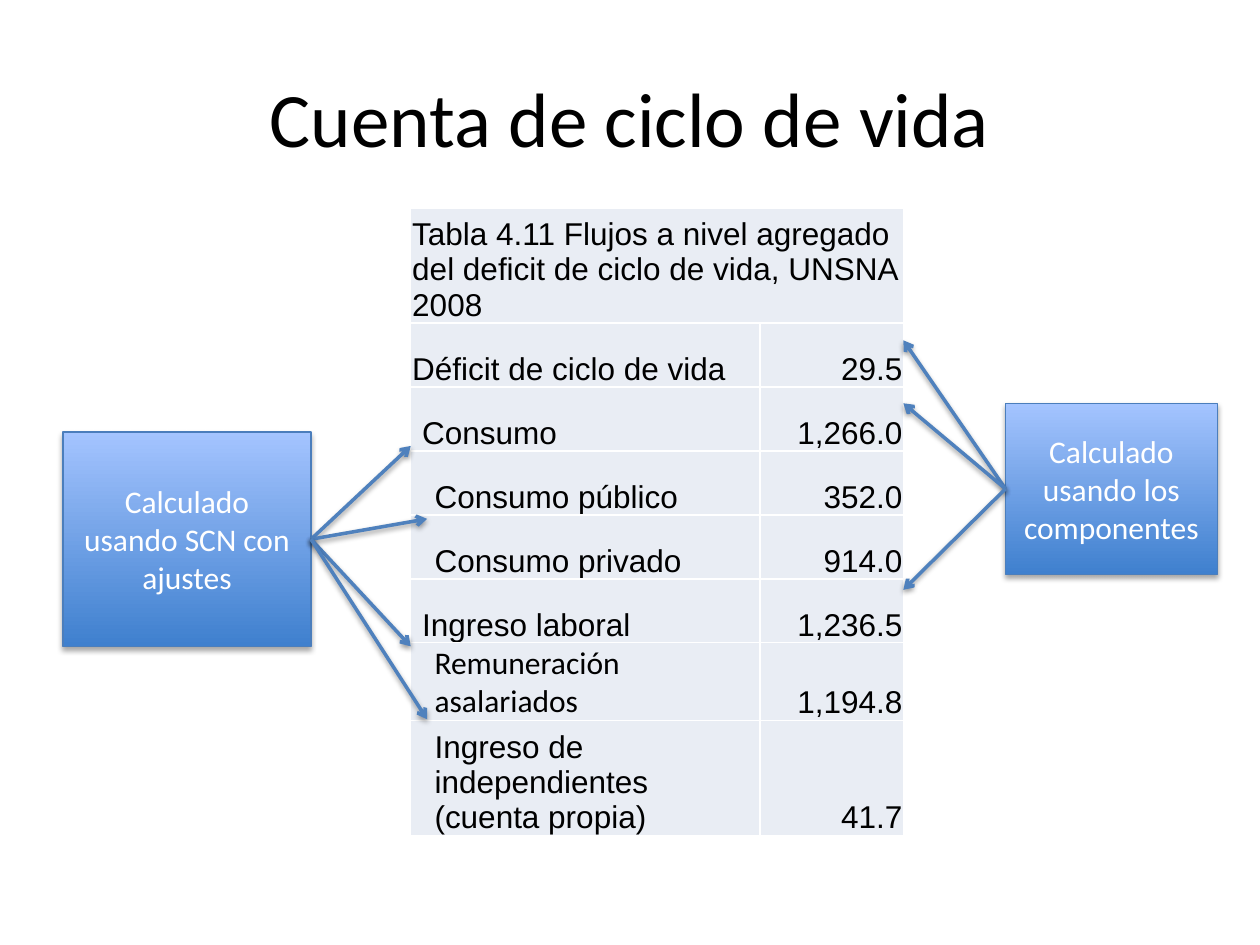
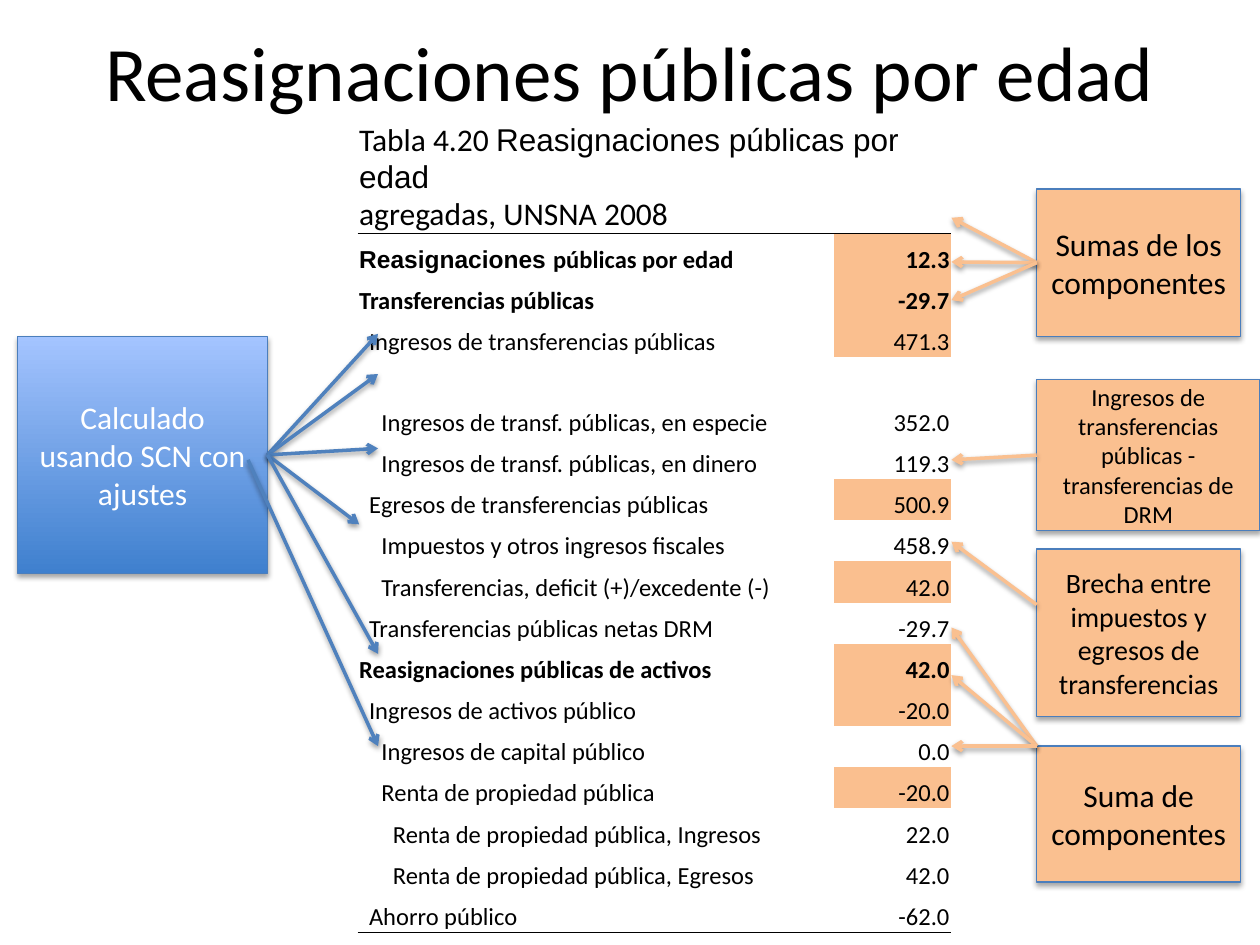
from dataclasses import dataclass

from lxml import etree
from pptx import Presentation
from pptx.dml.color import RGBColor
from pptx.enum.shapes import MSO_CONNECTOR, MSO_SHAPE
from pptx.enum.text import MSO_ANCHOR, PP_ALIGN
from pptx.oxml import parse_xml
from pptx.oxml.ns import nsdecls, qn
from pptx.util import Cm, Pt

RECT = MSO_SHAPE.RECTANGLE
STRAIGHT = MSO_CONNECTOR.STRAIGHT
MIDDLE, BOTTOM = MSO_ANCHOR.MIDDLE, MSO_ANCHOR.BOTTOM
LEFT, CENTER, RIGHT = PP_ALIGN.LEFT, PP_ALIGN.CENTER, PP_ALIGN.RIGHT
SIDE_LEFT, SIDE_RIGHT = 1, 3


@dataclass(frozen=True)
class Theme:
    calibri: str = "Calibri"
    arial: str = "Arial"
    black: str = "000000"
    white: str = "FFFFFF"
    blue: str = "4F81BD"
    outline: str = "4B7EBC"
    gradient: tuple = ("3F80CE", "A4C4FF")
    orange: str = "FAC090"
    marked: str = "FABF8F"
    pale: str = "E9EDF4"
    title: int = 44
    large: int = 18
    medium: int = 16
    small: int = 14
    indents: tuple = (0.03, 0.23, 0.48, 0.71)


T = Theme()


def rgb(value):
    return RGBColor.from_string(value)


class Deck:
    """Holds the theme and the current slide, and draws each kind of element."""

    def __init__(self):
        self.prs = Presentation()
        self.prs.slide_width, self.prs.slide_height = Cm(25.4), Cm(19.05)

    def slide(self, title, title_height):
        self.s = self.prs.slides.add_slide(self.prs.slide_layouts[6])
        tf = self.s.shapes.add_textbox(Cm(1.27), Cm(0.76), Cm(22.86), Cm(title_height)).text_frame
        tf.word_wrap = True
        tf.vertical_anchor = MIDDLE
        self.add_text(tf, [[(title, T.calibri)]], T.title, CENTER)

    def add_text(self, tf, paragraphs, size, align, color=T.black, bold=False):
        for i, runs in enumerate(paragraphs):
            p = tf.add_paragraph() if i else tf.paragraphs[0]
            p.alignment = align
            for text, font in runs:
                r = p.add_run()
                r.text = text
                r.font.name, r.font.size, r.font.bold = font, Pt(size), bold
                r.font.color.rgb = rgb(color)

    def shadow(self, shape, distance, opacity):
        spPr = shape._element.spPr
        for old in spPr.findall(qn("a:effectLst")):
            spPr.remove(old)
        spPr.append(parse_xml(
            f'<a:effectLst {nsdecls("a")}><a:outerShdw blurRad="{Pt(3.1)}" dist="{Pt(distance)}" '
            f'dir="5400000" rotWithShape="0"><a:srgbClr val="{T.black}">'
            f'<a:alpha val="{opacity * 1000}"/></a:srgbClr></a:outerShdw></a:effectLst>'))

    def box(self, x, y, w, h, text, size=T.large, fill=None):
        sp = self.s.shapes.add_shape(RECT, Cm(x), Cm(y), Cm(w), Cm(h))
        sp.shadow.inherit = False
        if fill:
            sp.fill.solid()
            sp.fill.fore_color.rgb = rgb(fill)
        else:
            sp.fill.gradient()
            sp.fill.gradient_angle = 90
            for stop, color in zip(sp.fill.gradient_stops, T.gradient):
                stop.color.rgb = rgb(color)
        sp.line.color.rgb = rgb(T.outline)
        sp.line.width = Pt(0.75)
        self.shadow(sp, 1.8, 35)
        sp.text_frame.word_wrap = True
        sp.text_frame.vertical_anchor = MIDDLE
        self.add_text(sp.text_frame, [[(text, T.calibri)]], size, CENTER, T.black if fill else T.white)
        return sp

    def arrow(self, start, end, color):
        cn = self.s.shapes.add_connector(STRAIGHT, *map(Cm, start + end))
        cn.line.color.rgb = rgb(color)
        cn.line.width = Pt(2)
        etree.SubElement(cn.line._get_or_add_ln(), qn("a:tailEnd"), type="arrow")
        self.shadow(cn, 1.6, 38)
        return cn

    def fan(self, box, side, ends, color):
        for end in ends:
            self.arrow((0, 0), end, color).begin_connect(box, side)

    def cell(self, cell, paragraphs, size, align, fill, indent=0, bold=False):
        cell.margin_left = Cm(T.indents[indent])
        cell.margin_top = cell.margin_right = Cm(0.03)
        cell.margin_bottom = 0
        cell.vertical_anchor = BOTTOM
        if fill:
            cell.fill.solid()
            cell.fill.fore_color.rgb = rgb(fill)
        else:
            cell.fill.background()
        self.add_text(cell.text_frame, paragraphs, size, align, bold=bold)

    def borders(self, cell, edges):
        tcPr = cell._tc.get_or_add_tcPr()
        for i, side in enumerate("LRTB"):
            color, width = edges.get(side, (None, 0))
            paint = f'<a:solidFill><a:srgbClr val="{color}"/></a:solidFill>' if color else "<a:noFill/>"
            tcPr.insert(i, parse_xml(f'<a:ln{side} {nsdecls("a")} w="{Pt(width)}">{paint}</a:ln{side}>'))

    def table(self, x, y, widths, heights, header, rows, size, fill, edges_of):
        frame = self.s.shapes.add_table(len(heights), 2, Cm(x), Cm(y), Cm(sum(widths)), Cm(sum(heights)))
        tbl = frame.table
        tbl.first_row = tbl.horz_banding = False
        for col, w in zip(tbl.columns, widths):
            col.width = Cm(w)
        for row, h in zip(tbl.rows, heights):
            row.height = Cm(h)
        tbl.cell(0, 0).merge(tbl.cell(0, 1))
        self.cell(tbl.cell(0, 0), header, T.large, LEFT, fill)
        for i, (indent, runs, value, value_font, value_fill, bold) in enumerate(rows, 1):
            self.cell(tbl.cell(i, 0), [runs], size, LEFT, fill, indent, bold)
            self.cell(tbl.cell(i, 1), [[(value, value_font)]], size, RIGHT, value_fill, bold=bold)
        for i in range(len(heights)):
            for j in range(2):
                self.borders(tbl.cell(i, j), edges_of(i))


def life_cycle(deck):
    deck.slide("Cuenta de ciclo de vida", 3.18)
    flows = [
        (0, "Déficit de ciclo de vida", "29.5", T.arial),
        (1, "Consumo", "1,266.0", T.arial),
        (2, "Consumo público", "352.0", T.arial),
        (2, "Consumo privado", "914.0", T.arial),
        (1, "Ingreso laboral", "1,236.5", T.arial),
        (2, "Remuneración asalariados", "1,194.8", T.calibri),
        (2, "Ingreso de independientes (cuenta propia)", "41.7", T.arial),
    ]
    rows = [(indent, [(label, font)], value, T.arial, T.pale, False)
            for indent, label, value, font in flows]
    header = [[("Tabla 4.11 Flujos a nivel agregado del deficit de ciclo de vida, UNSNA 2008", T.arial)]]
    grid = dict.fromkeys("LRTB", (T.white, 1))
    deck.table(8.28, 4.19, (7.04, 2.9), [2.16] + [1.29] * 5 + [1.57, 2.16],
               header, rows, T.large, T.pale, lambda i: grid)

    components = deck.box(20.27, 8.13, 4.27, 3.45, "Calculado usando los componentes")
    deck.fan(components, SIDE_LEFT, [(18.21, y) for y in (6.86, 8.13, 11.89)], T.blue)
    accounts = deck.box(1.27, 8.71, 5, 4.32, "Calculado usando SCN con ajustes")
    deck.fan(accounts, SIDE_RIGHT,
             [(8.28, 8.99), (8.61, 10.46), (8.28, 13.03), (8.61, 14.5)], T.blue)


def public_reallocations(deck):
    deck.slide("Reasignaciones públicas por edad", 1.32)
    flows = [
        (0, "públicas por edad", "12.3", True),
        (0, "Transferencias públicas", "-29.7", True),
        (1, "Ingresos de transferencias públicas", "471.3", True),
        (2, "Ingresos de transf. públicas, en especie", "352.0", False),
        (2, "Ingresos de transf. públicas, en dinero", "119.3", False),
        (1, "Egresos de transferencias públicas", "500.9", True),
        (2, "Impuestos y otros ingresos fiscales", "458.9", False),
        (2, "Transferencias, deficit (+)/excedente (-)", "42.0", True),
        (1, "Transferencias públicas netas DRM", "-29.7", False),
        (0, "Reasignaciones públicas de activos", "42.0", True),
        (1, "Ingresos de activos público", "-20.0", True),
        (2, "Ingresos de capital público", "0.0", False),
        (2, "Renta de propiedad pública", "-20.0", True),
        (3, "Renta de propiedad pública, Ingresos", "22.0", False),
        (3, "Renta de propiedad pública, Egresos", "42.0", False),
        (1, "Ahorro público", "-62.0", False),
    ]
    rows = [(indent, [(label, T.calibri)], value, T.calibri, T.marked if marked else None, indent == 0)
            for indent, label, value, marked in flows]
    rows[0][1].insert(0, ("Reasignaciones ", T.arial))
    header = [[("Tabla 4.20 ", T.calibri), ("Reasignaciones públicas por edad", T.arial)],
              [("agregadas, UNSNA 2008", T.calibri)]]
    rule = (T.black, 0.5)
    ruled = {0: {"B": rule}, 1: {"T": rule}, len(rows): {"B": rule}}
    deck.table(7.21, 2.39, (9.61, 2.35), [2.29] + [0.83] * 3 + [1.63] + [0.83] * 12,
               header, rows, T.small, None, lambda i: ruled.get(i, {}))

    x, table_edge = 20.9, 19.18
    sums = deck.box(x, 3.81, 4.11, 2.97, "Sumas de los componentes", fill=T.orange)
    deck.fan(sums, SIDE_LEFT, [(table_edge, y) for y in (4.39, 5.28, 6.05)], T.orange)
    income = deck.box(x, 7.65, 4.5, 3.05, "Ingresos de transferencias públicas - transferencias de DRM",
                      T.small, T.orange)
    deck.fan(income, SIDE_LEFT, [(table_edge, 9.27)], T.orange)
    deck.box(x, 11.07, 4.11, 3.38, "Brecha entre impuestos y egresos de transferencias",
             T.medium, T.orange)
    deck.arrow((x, 12.19), (table_edge, 10.92), T.orange)
    deck.box(x, 15.04, 4.11, 2.74, "Suma de componentes", fill=T.orange)
    for y in (12.65, 13.61, 15.04):
        deck.arrow((x, 15.04), (table_edge, y), T.orange)

    accounts = deck.box(0.36, 6.78, 5.03, 4.78, "Calculado usando SCN con ajustes")
    deck.fan(accounts, SIDE_RIGHT,
             [(7.62, 6.73), (7.62, 7.54), (7.62, 9.04), (7.24, 10.57), (7.62, 13.18)], T.blue)
    deck.arrow((5, 9.27), (7.62, 15.04), T.blue)


def main():
    deck = Deck()
    life_cycle(deck)
    public_reallocations(deck)
    deck.prs.save("out.pptx")


if __name__ == "__main__":
    main()
